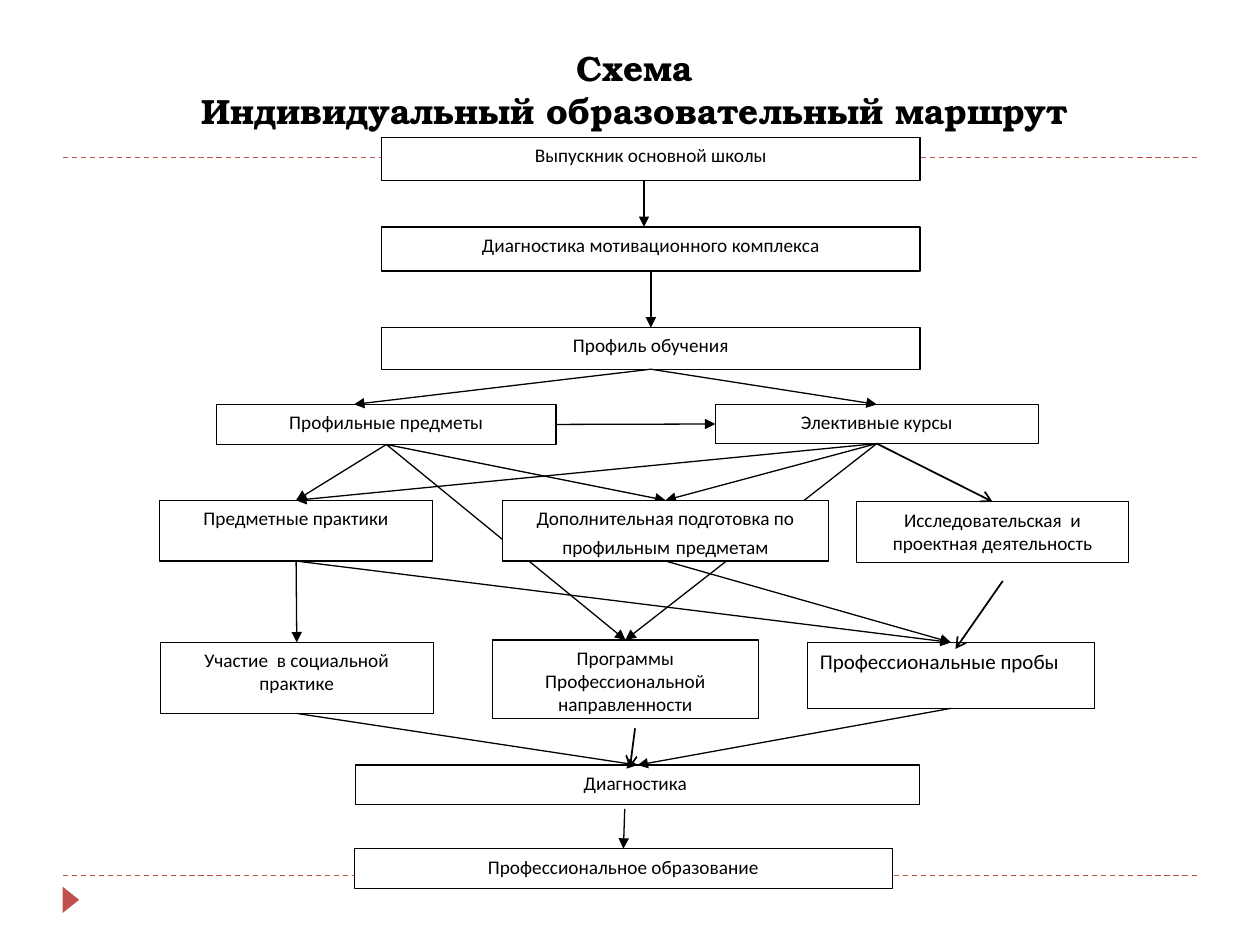
from lxml.etree import SubElement
from pptx import Presentation
from pptx.dml.color import RGBColor
from pptx.enum.dml import MSO_LINE
from pptx.enum.shapes import MSO_CONNECTOR, MSO_SHAPE
from pptx.enum.text import MSO_ANCHOR, PP_ALIGN
from pptx.oxml.ns import qn
from pptx.util import Pt

BLACK = RGBColor(0x00, 0x00, 0x00)
WHITE = RGBColor(0xFF, 0xFF, 0xFF)
RED = RGBColor(0xC0, 0x50, 0x4D)
TOP, LEFT, BOTTOM, RIGHT = range(4)


def write(paragraph, text, font="Calibri", size=11, bold=False, align=PP_ALIGN.CENTER):
    paragraph.alignment = align
    run = paragraph.add_run()
    run.text = text
    run.font.name = font
    run.font.size = Pt(size)
    run.font.bold = bold
    run.font.color.rgb = BLACK


def draw_line(start, end, color=BLACK, weight=0.75, head=None):
    ends = [(0, 0) if isinstance(point[0], str) else point for point in (start, end)]
    line = slide.shapes.add_connector(
        MSO_CONNECTOR.STRAIGHT, *(Pt(value) for point in ends for value in point))
    if isinstance(start[0], str):
        line.begin_connect(boxes[start[0]], start[1])
    if isinstance(end[0], str):
        line.end_connect(boxes[end[0]], end[1])
    line.line.color.rgb = color
    line.line.width = Pt(weight)
    if head:
        SubElement(line.line._get_or_add_ln(), qn("a:tailEnd"), type=head)
    SubElement(line._element.spPr, qn("a:effectLst"))
    return line


deck = Presentation()
deck.slide_width, deck.slide_height = Pt(720), Pt(540)
slide = deck.slides.add_slide(deck.slide_layouts[5])

title = slide.shapes.title
title.left, title.top, title.width, title.height = Pt(44.6), Pt(16.5), Pt(636.5), Pt(62)
title.text_frame.vertical_anchor = MSO_ANCHOR.BOTTOM
heading = title.text_frame.paragraphs[0]
heading_format = {"font": "TeX Gyre Bonum", "size": 20, "bold": True}
write(heading, "Схема", **heading_format)
heading.add_line_break()
write(heading, "Индивидуальный образовательный маршрут", **heading_format)

for y in (90, 500.4):
    rule = draw_line((36, y), (684, y), color=RED)
    rule.line.dash_style = MSO_LINE.DASH

marker = slide.shapes.add_shape(MSO_SHAPE.ISOSCELES_TRIANGLE, Pt(33), Pt(509.5), Pt(15), Pt(9.4))
marker.rotation = 90
marker.shadow.inherit = False
marker.fill.solid()
marker.fill.fore_color.rgb = RED
marker.line.fill.background()

box_rows = [
    ("graduate", 218.2, 78.6, 307.5, 24.5, "Выпускник основной школы", {}),
    ("motivation", 218.2, 129.7, 307.5, 25.2, "Диагностика мотивационного комплекса", {}),
    ("profile", 218.2, 187.2, 307.5, 23.8, "Профиль обучения", {}),
    ("subjects", 123.8, 231.1, 194, 22.9, "Профильные предметы", {}),
    ("electives", 408.8, 231.1, 184.5, 22.4, "Элективные курсы", {}),
    ("practice", 91.2, 285.9, 156, 34.7, "Предметные практики", {}),
    ("extra", 287.1, 285.9, 186.4, 34.7, "Дополнительная подготовка по профильным", {}),
    ("research", 489.4, 286.7, 155.6, 34.6, "Исследовательская  и проектная деятельность", {}),
    ("social", 91.6, 367.1, 156, 40.6, "Участие  в социальной практике", {}),
    ("programs", 281.4, 365.7, 152, 45, "Программы Профессиональной направленности", {}),
    ("trials", 461.4, 367.1, 164, 37.7, "Профессиональные пробы",
     {"size": 12, "align": PP_ALIGN.LEFT}),
    ("diagnostics", 203, 437.2, 322.7, 22.5, "Диагностика ", {}),
    ("education", 202.5, 485, 307.5, 22.8, "Профессиональное образование", {}),
]
boxes = {}
for name, left, top, width, height, text, text_format in box_rows:
    box = slide.shapes.add_shape(MSO_SHAPE.RECTANGLE, Pt(left), Pt(top), Pt(width), Pt(height))
    box.shadow.inherit = False
    box.fill.solid()
    box.fill.fore_color.rgb = WHITE
    box.line.color.rgb = BLACK
    box.line.width = Pt(0.75)
    box.text_frame.word_wrap = True
    box.text_frame.vertical_anchor = MSO_ANCHOR.TOP
    paragraph = box.text_frame.paragraphs[0]
    paragraph.space_after = Pt(10)
    write(paragraph, text, **text_format)
    boxes[name] = box

extra_text = boxes["extra"].text_frame.paragraphs[0]
write(extra_text, " ", size=14)
write(extra_text, "предметам")

downward = [
    ("motivation", "profile"), ("profile", "electives"),
    ("subjects", "practice"), ("subjects", "extra"), ("subjects", "programs"),
    ("electives", "practice"), ("electives", "extra"), ("electives", "programs"),
    ("practice", "social"), ("practice", "trials"), ("extra", "trials"),
    ("social", "diagnostics"), ("trials", "diagnostics"),
]
for upper, lower in downward:
    draw_line((upper, BOTTOM), (lower, TOP), head="triangle")

draw_line((368, 103.1), (368, 129.7), head="triangle")
draw_line(("profile", BOTTOM), (202.3, 231.1), head="triangle")
draw_line(("subjects", RIGHT), ("electives", LEFT), head="triangle")
draw_line((357, 462.2), ("education", TOP), head="triangle")

draw_line(("electives", BOTTOM), ("research", TOP), weight=1, head="arrow")
draw_line((573, 332), (546, 370.8), weight=1, head="arrow")
draw_line((362.9, 416.2), (360, 438.5), weight=1, head="arrow")

slide.shapes._spTree.append(boxes["extra"]._element)

deck.save("out.pptx")
